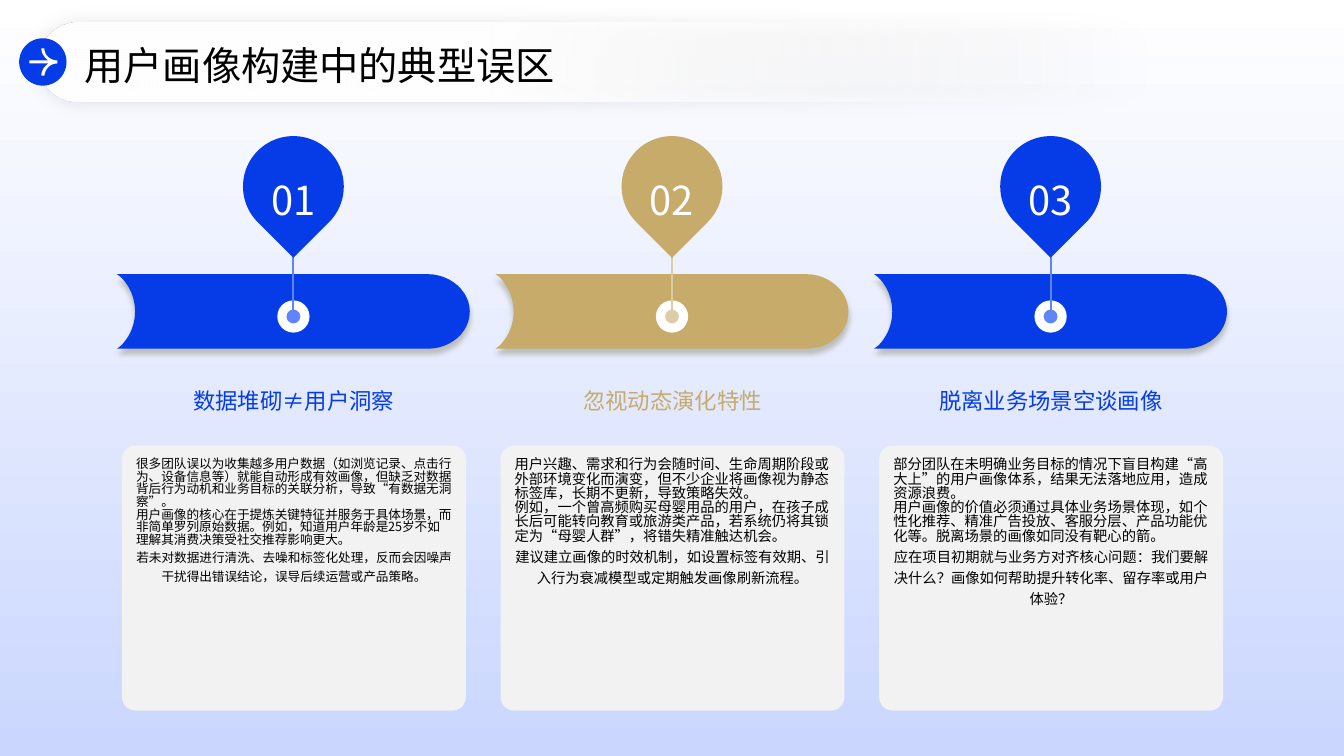
from lxml import etree
from pptx import Presentation
from pptx.dml.color import RGBColor
from pptx.enum.shapes import MSO_CONNECTOR, MSO_SHAPE
from pptx.enum.text import MSO_ANCHOR, PP_ALIGN
from pptx.oxml.ns import qn
from pptx.util import Inches, Pt

STRAIGHT = MSO_CONNECTOR.STRAIGHT
RECT, ROUND_RECT = MSO_SHAPE.RECTANGLE, MSO_SHAPE.ROUNDED_RECTANGLE
OVAL, TEARDROP = MSO_SHAPE.OVAL, MSO_SHAPE.TEAR
TOP, MIDDLE = MSO_ANCHOR.TOP, MSO_ANCHOR.MIDDLE
LEFT, CENTER = PP_ALIGN.LEFT, PP_ALIGN.CENTER

FONT = "Noto Sans CJK SC"
BLUE, GOLD, WHITE, BLACK = "063CE8", "C6AB6A", "FFFFFF", "000000"
LIGHT_BLUE, LIGHT_GOLD = "6085FB", "DDCDA6"
SLIDE_W, SLIDE_H = 13.33, 7.5
COLUMN_LEFT, COLUMN_TOP, COLUMN_PITCH = 1.16, 1.35, 7.51 / 2

# Each outline is a list of points; six numbers make a cubic curve.
BAND = [(0, 0), (3.08, 0), (3.31, 0, 3.5, 0.17, 3.5, 0.37),
        (3.5, 0.58, 3.31, 0.74, 3.08, 0.74), (0, 0.74), (0.04, 0.71),
        (0.13, 0.62, 0.18, 0.5, 0.18, 0.37), (0.18, 0.24, 0.13, 0.12, 0.04, 0.03)]
ARROW = [(0, 0.12), (0.19, 0.12), (0.15, 0.09, 0.12, 0.05, 0.12, 0), (0.15, 0),
         (0.15, 0.07, 0.21, 0.12, 0.28, 0.12), (0.28, 0.15),
         (0.21, 0.15, 0.16, 0.2, 0.15, 0.27), (0.12, 0.27),
         (0.12, 0.22, 0.15, 0.18, 0.19, 0.15), (0, 0.15)]

PITFALLS = [
    ("01", "数据堆砌≠用户洞察", BLUE, LIGHT_BLUE, 9, [
        "很多团队误以为收集越多用户数据（如浏览记录、点击行为、设备信息等）就能自动形成有效画像，但缺乏对数据背后行为动机和业务目标的关联分析，导致“有数据无洞察”。",
        "用户画像的核心在于提炼关键特征并服务于具体场景，而非简单罗列原始数据。例如，知道用户年龄是25岁不如理解其消费决策受社交推荐影响更大。",
        "若未对数据进行清洗、去噪和标签化处理，反而会因噪声干扰得出错误结论，误导后续运营或产品策略。"]),
    ("02", "忽视动态演化特性", GOLD, LIGHT_GOLD, 10.2, [
        "用户兴趣、需求和行为会随时间、生命周期阶段或外部环境变化而演变，但不少企业将画像视为静态标签库，长期不更新，导致策略失效。",
        "例如，一个曾高频购买母婴用品的用户，在孩子成长后可能转向教育或旅游类产品，若系统仍将其锁定为“母婴人群”，将错失精准触达机会。",
        "建议建立画像的时效机制，如设置标签有效期、引入行为衰减模型或定期触发画像刷新流程。"]),
    ("03", "脱离业务场景空谈画像", BLUE, LIGHT_BLUE, 10.2, [
        "部分团队在未明确业务目标的情况下盲目构建“高大上”的用户画像体系，结果无法落地应用，造成资源浪费。",
        "用户画像的价值必须通过具体业务场景体现，如个性化推荐、精准广告投放、客服分层、产品功能优化等。脱离场景的画像如同没有靶心的箭。",
        "应在项目初期就与业务方对齐核心问题：我们要解决什么？画像如何帮助提升转化率、留存率或用户体验？"]),
]


def rgb(color):
    return RGBColor.from_string(color)


def style(shape, color=None):
    """Drop the default line and shadow, and fill with one colour if given."""
    if color:
        shape.fill.solid()
        shape.fill.fore_color.rgb = rgb(color)
    shape.line.fill.background()
    shape.shadow.inherit = False
    return shape


def add_preset(slide, kind, x, y, w, h, color=None):
    shape = slide.shapes.add_shape(kind, Inches(x), Inches(y), Inches(w), Inches(h))
    return style(shape, color)


def add_outline(slide, outline, x, y, color, steps=12):
    points = []
    for segment in outline:
        if len(segment) == 2:
            points.append(segment)
            continue
        start, c1, c2, end = points[-1], segment[:2], segment[2:4], segment[4:]
        for step in range(1, steps + 1):
            t = step / steps
            weights = ((1 - t) ** 3, 3 * t * (1 - t) ** 2, 3 * t * t * (1 - t), t ** 3)
            points.append(tuple(sum(k * p[axis] for k, p in zip(weights, (start, c1, c2, end)))
                                for axis in (0, 1)))
    placed = [(Inches(x + px), Inches(y + py)) for px, py in points]
    builder = slide.shapes.build_freeform(*placed[0])
    builder.add_line_segments(placed[1:], close=True)
    return style(builder.convert_to_shape(), color)


def set_gradient(shape, angle, stops):
    """Fill with two stops, each (position, colour, opacity in percent)."""
    shape.fill.gradient()
    shape.fill.gradient_angle = angle
    for stop, (position, color, opacity) in zip(shape.fill.gradient_stops, stops):
        stop.position = position
        stop.color.rgb = rgb(color)
    for node, (_, _, opacity) in zip(shape.element.spPr.iter(qn("a:gs")), stops):
        if opacity < 100:
            etree.SubElement(node[0], qn("a:alpha"), val=str(opacity * 1000))


def set_shadow(shape, color, opacity, blur, distance, angle):
    effects = shape.element.spPr.find(qn("a:effectLst"))
    shadow = etree.SubElement(effects, qn("a:outerShdw"), blurRad=str(Pt(blur)),
                              dist=str(Pt(distance)), dir=str(angle * 60000),
                              algn="ctr", rotWithShape="0")
    tint = etree.SubElement(shadow, qn("a:srgbClr"), val=color)
    etree.SubElement(tint, qn("a:alpha"), val=str(opacity * 1000))


def set_frame(frame, anchor, inset_x=0, inset_y=0):
    frame.word_wrap = True
    frame.vertical_anchor = anchor
    frame.margin_left = frame.margin_right = Inches(inset_x)
    frame.margin_top = frame.margin_bottom = Inches(inset_y)
    return frame


def write(paragraph, text, size, color, align, spacing):
    paragraph.alignment = align
    paragraph.line_spacing = spacing
    run = paragraph.add_run()
    run.text = text
    run.font.size = Pt(size)
    run.font.color.rgb = rgb(color)
    run.font.name = FONT
    etree.SubElement(run.font._element, qn("a:ea"), typeface=FONT)


def add_frame(slide, x, y, w, h, anchor=TOP, inset_x=0, inset_y=0):
    box = slide.shapes.add_textbox(Inches(x), Inches(y), Inches(w), Inches(h))
    return set_frame(box.text_frame, anchor, inset_x, inset_y)


def add_stem(slide, x, top, bottom, color):
    """Vertical line with a round dot at each end."""
    stem = slide.shapes.add_connector(STRAIGHT, Inches(x), Inches(top), Inches(x), Inches(bottom))
    stem.line.color.rgb = rgb(color)
    stem.line.width = Pt(1.34)
    line = stem.line._get_or_add_ln()
    for end in ("a:headEnd", "a:tailEnd"):
        etree.SubElement(line, qn(end), type="oval", w="lg", len="lg")
    etree.SubElement(stem.element.spPr, qn("a:effectLst"))


def add_pitfall(slide, x, y, number, heading, color, stem_color, body_size, body):
    center = x + 1.75
    band = add_outline(slide, BAND, x, y + 1.37, color)
    set_shadow(band, "BFBFBF", 100, 4, 4, 90)
    card = add_preset(slide, ROUND_RECT, x + 0.05, y + 3.07, 3.41, 2.63, "F2F2F2")
    card.adjustments[0] = 0.05
    add_preset(slide, OVAL, center - 0.16, y + 1.63, 0.32, 0.32, WHITE)
    add_stem(slide, center, y + 0.88, y + 1.79, stem_color)
    add_preset(slide, TEARDROP, center - 0.5, y, 1, 1, color).rotation = 135

    heading_frame = add_frame(slide, x + 0.19, y + 2.24, 3.13, 0.71, MIDDLE)
    write(heading_frame.paragraphs[0], heading, 16, color, CENTER, 1.2)
    body_frame = add_frame(slide, x + 0.19, y + 3.2, 3.13, 2.36)
    *points, advice = body
    for index, point in enumerate(points):
        paragraph = body_frame.add_paragraph() if index else body_frame.paragraphs[0]
        write(paragraph, point, body_size, BLACK, LEFT, 0.83)
    write(body_frame.add_paragraph(), advice, body_size, BLACK, CENTER, 1.23)
    number_frame = add_frame(slide, center - 0.41, y + 0.26, 0.82, 0.62, TOP, 0.09, 0.04)
    write(number_frame.paragraphs[0], number, 28.5, WHITE, CENTER, 1.2)


def add_header(slide, x, y, text):
    capsule = add_preset(slide, ROUND_RECT, x + 0.19, y, 11.08, 0.79)
    capsule.adjustments[0] = 0.5
    set_gradient(capsule, 180, [(0, WHITE, 0), (0.6, WHITE, 100)])
    set_shadow(capsule, BLACK, 10, 13, 0, 0)

    title = slide.shapes.title
    title.left, title.top = Inches(x + 0.65), Inches(y + 0.16)
    title.width, title.height = Inches(10.02), Inches(0.47)
    frame = set_frame(title.text_frame, MIDDLE)
    write(frame.paragraphs[0], text, 28, BLACK, LEFT, 1.1)
    title.element.getparent().append(title.element)  # bring above the capsule

    add_preset(slide, OVAL, x, y + 0.16, 0.47, 0.47, BLUE)
    add_outline(slide, ARROW, x + 0.1, y + 0.26, WHITE)


def main():
    deck = Presentation()
    deck.slide_width, deck.slide_height = Inches(SLIDE_W), Inches(SLIDE_H)
    slide = deck.slides.add_slide(deck.slide_layouts[5])
    backdrop = add_preset(slide, RECT, 0, 0, SLIDE_W, SLIDE_H)
    set_gradient(backdrop, 270, [(0, WHITE, 100), (1, "CAD6FE", 100)])
    for index, pitfall in enumerate(PITFALLS):
        add_pitfall(slide, COLUMN_LEFT + index * COLUMN_PITCH, COLUMN_TOP, *pitfall)
    add_header(slide, 0.19, 0.22, "用户画像构建中的典型误区")
    deck.save("out.pptx")


if __name__ == "__main__":
    main()
